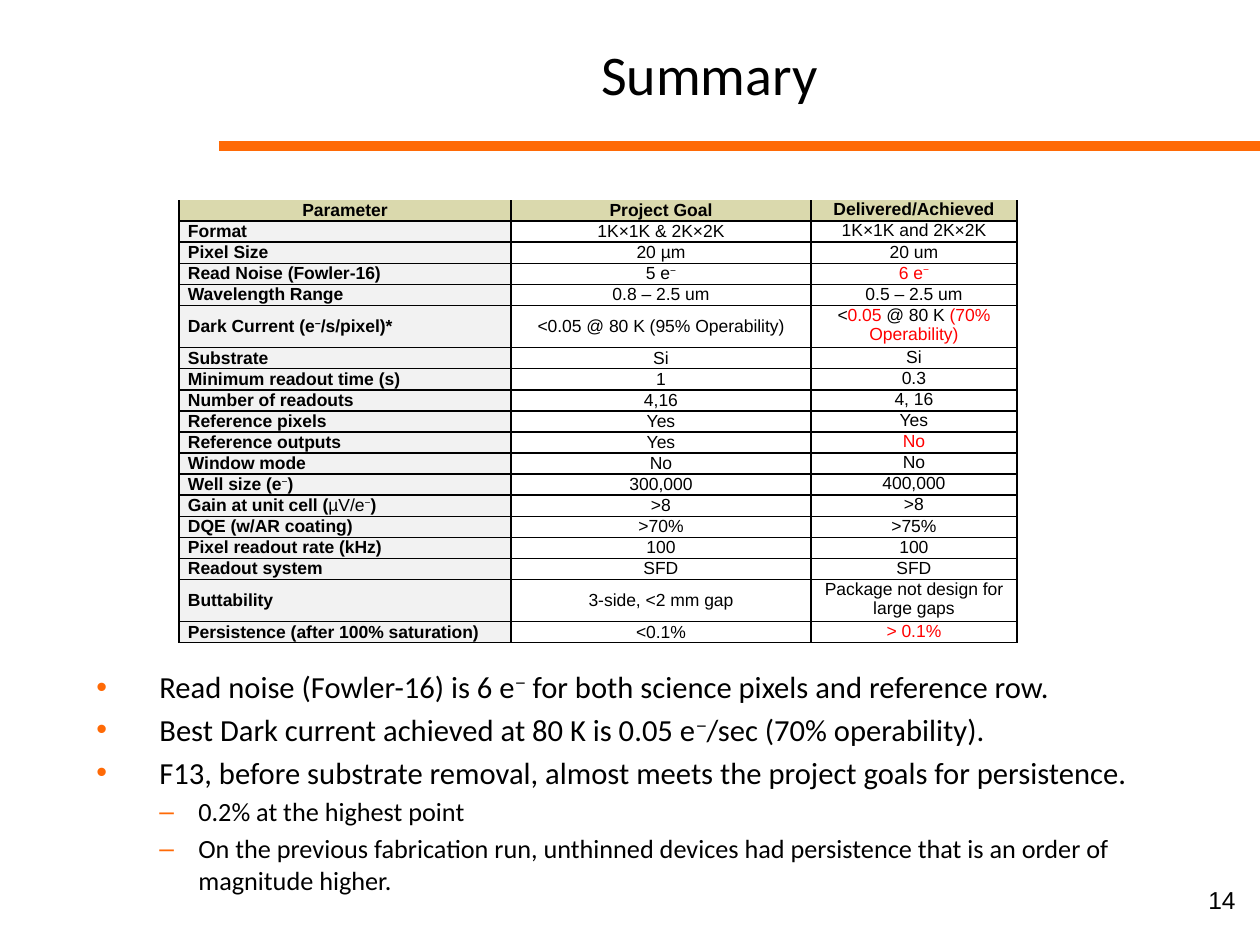
from lxml.etree import SubElement
from pptx import Presentation
from pptx.dml.color import RGBColor
from pptx.enum.shapes import MSO_CONNECTOR as Connector
from pptx.enum.text import MSO_ANCHOR as Anchor, PP_ALIGN as Align
from pptx.oxml.ns import qn
from pptx.util import Pt

SCALE = 914400 / 126
BLACK, WHITE, ORANGE = "000000", "FFFFFF", "FF6A06"
KHAKI, GREY = "DAD9AD", "F2F2F2"
RED = {"color": "FF0000"}
SUP = {"baseline": 30000}
PLAIN = {"bold": False}
MINUS = ("−", SUP)

HEADINGS = ["Parameter", "Project Goal", "Delivered/Achieved"]
ROWS = [
    ["Format", "1K×1K & 2K×2K", "1K×1K and 2K×2K"],
    ["Pixel Size", "20 µm", "20 um"],
    ["Read Noise (Fowler-16)", ["5 e", MINUS], [("6 e", RED), ("−", {**SUP, **RED})]],
    ["Wavelength Range", "0.8 – 2.5 um", "0.5 – 2.5 um"],
    [["Dark Current (e", MINUS, "/s/pixel)*"], "<0.05 @ 80 K (95% Operability)",
     ["<", ("0.05 ", RED), "@ 80 K ", ("(70% Operability)", RED)]],
    ["Substrate", "Si", "Si"],
    ["Minimum readout time (s)", "1", "0.3"],
    ["Number of readouts", "4,16", "4, 16"],
    ["Reference pixels", "Yes", "Yes"],
    ["Reference outputs", "Yes", [("No", RED)]],
    ["Window mode", "No", "No"],
    [["Well size (e", ("−", {**SUP, **PLAIN}), ")"], "300,000", "400,000"],
    [["Gain at unit cell (", ("µV/e", PLAIN), ("−", {**SUP, **PLAIN}), ")"], ">8", ">8"],
    ["DQE (w/AR coating)", ">70%", ">75%"],
    ["Pixel readout rate (kHz)", "100", "100"],
    ["Readout system", "SFD", "SFD"],
    ["Buttability", "3-side, <2 mm gap", "Package not design for large gaps"],
    ["Persistence (after 100% saturation)", "<0.1%", [("> 0.1%", RED)]],
]
RAISED = ("−", {**SUP, "name": "Arial"})
POINTS = [
    (0, ["Read noise (Fowler-16) is 6 e", RAISED, " for both science pixels and reference row."]),
    (0, ["Best Dark current achieved at 80 K is 0.05 e", RAISED, "/sec (70% operability)."]),
    (0, "F13, before substrate removal, almost meets the project goals for persistence."),
    (1, "0.2% at the highest point"),
    (1, "On the previous fabrication run, unthinned devices had persistence "
        "that is an order of magnitude higher."),
]
LEVELS = [
    {"sign": "•", "margin": 63, "indent": -63, "size": 17.5},
    {"sign": "–", "margin": 102, "indent": -39, "size": 15},
]


def px(length):
    return round(length * SCALE)


def rgb(color):
    return RGBColor.from_string(color)


def set_all(target, values):
    for name, value in values.items():
        setattr(target, name, value)


def write(para, content, size, name, **extra):
    for part in [content] if isinstance(content, str) else content:
        text, changes = (part, {}) if isinstance(part, str) else part
        values = {"size": Pt(size), "name": name, "color": BLACK, **extra, **changes}
        color, baseline = values.pop("color"), values.pop("baseline", None)
        span = para.add_run()
        span.text = text
        set_all(span.font, values)
        span.font.color.rgb = rgb(color)
        if baseline:
            span.font._element.set("baseline", str(baseline))


def add_title(page, box):
    title = page.shapes.title
    set_all(title, dict(zip(("left", "top", "width", "height"), map(px, box))))
    title.text_frame.vertical_anchor = Anchor.MIDDLE
    para = title.text_frame.paragraphs[0]
    para.alignment = Align.CENTER
    write(para, "Summary", 32, "Calibri")


def add_rule(page, left, right, y):
    rule = page.shapes.add_connector(Connector.STRAIGHT, px(left), px(y), px(right), px(y))
    rule.line.width = Pt(6)
    rule.line.color.rgb = rgb(ORANGE)
    SubElement(rule._element.spPr, qn("a:effectLst"))


def format_cell(cell, fill, sides):
    set_all(cell, {"margin_left": px(9), "margin_right": px(9),
                   "margin_top": 0, "margin_bottom": 0})
    props = cell._tc.get_or_add_tcPr()
    for side in "LRTB":
        border = SubElement(props, qn(f"a:ln{side}"), w=str(Pt(1)))
        if side in sides:
            paint = SubElement(border, qn("a:solidFill"))
            SubElement(paint, qn("a:srgbClr"), val=BLACK)
        else:
            SubElement(border, qn("a:noFill"))
    cell.fill.solid()
    cell.fill.fore_color.rgb = rgb(fill)


def add_parameter_table(page, left, top, widths, row_height):
    count = len(ROWS) + 2
    frame = page.shapes.add_table(count, len(widths), px(left), px(top),
                                  px(sum(widths)), px(row_height * count))
    table = frame.table
    set_all(table, {"first_row": False, "horz_banding": False})
    for column, width in zip(table.columns, widths):
        column.width = px(width)
    for row in table.rows:
        row.height = px(row_height)
    for cell in table.rows[0].cells:
        format_cell(cell, WHITE, "")
        SubElement(cell.text_frame.paragraphs[0]._p, qn("a:endParaRPr"), sz="1000")
    table.cell(0, 0).merge(table.cell(0, len(widths) - 1))
    for r, contents in enumerate([HEADINGS, *ROWS], 1):
        heading = r == 1
        for c, content in enumerate(contents):
            cell = table.cell(r, c)
            fill = KHAKI if heading else WHITE if c else GREY
            format_cell(cell, fill, "LRB" if heading else "LRTB")
            cell.vertical_anchor = Anchor.TOP if c == 2 else Anchor.MIDDLE
            para = cell.text_frame.paragraphs[0]
            para.alignment = Align.CENTER if heading or c else Align.LEFT
            write(para, content, 10, "Arial", bold=heading or c == 0)


def add_text_box(page, box):
    frame = page.shapes.add_textbox(*map(px, box)).text_frame
    frame.word_wrap = True
    return frame


def add_points(page, box):
    frame = add_text_box(page, box)
    for i, (depth, content) in enumerate(POINTS):
        level = LEVELS[depth]
        para = frame.add_paragraph() if i else frame.paragraphs[0]
        props = para._p.get_or_add_pPr()
        props.set("marL", str(px(level["margin"])))
        props.set("indent", str(px(level["indent"])))
        tint = SubElement(props, qn("a:buClr"))
        SubElement(tint, qn("a:srgbClr"), val=ORANGE)
        SubElement(props, qn("a:buFont"), typeface="Arial")
        SubElement(props, qn("a:buChar"), char=level["sign"])
        para.level = depth
        if i:
            para.space_before = Pt(level["size"] * 0.2)
        write(para, content, level["size"], "Calibri")


def add_page_number(page, box):
    para = add_text_box(page, box).paragraphs[0]
    para.alignment = Align.RIGHT
    write(para, "14", 14, "Arial")


def main():
    deck = Presentation()
    set_all(deck, {"slide_width": px(1260), "slide_height": px(945)})
    page = deck.slides.add_slide(deck.slide_layouts[5])
    add_rule(page, 219, 1260, 146)
    add_title(page, (221, 10, 977, 126))
    add_page_number(page, (954, 879, 294, 66))
    add_points(page, (84, 662, 1125, 242))
    add_parameter_table(page, 179, 179, (332, 300, 206), 19)
    deck.save("out.pptx")


if __name__ == "__main__":
    main()
